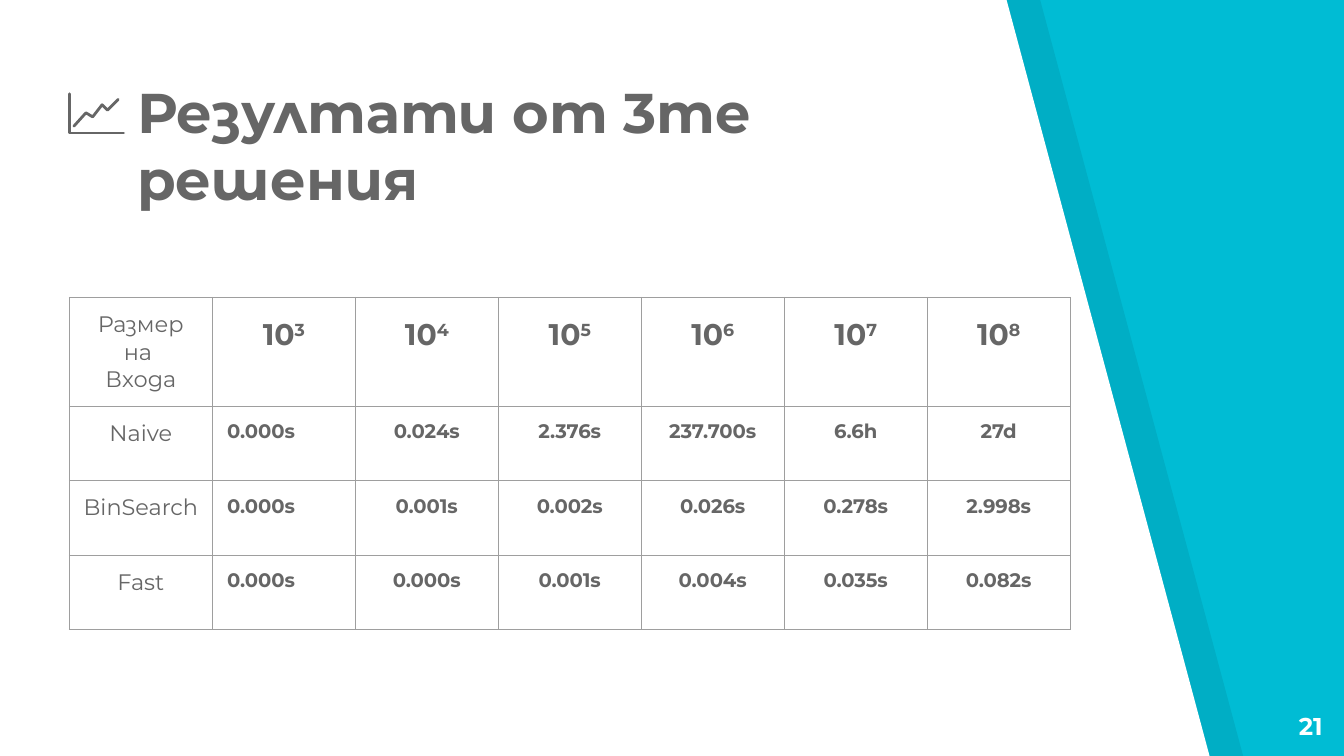
import dataclasses
import typing

import pptx
import pptx.dml.color
import pptx.enum.lang
import pptx.enum.text
import pptx.oxml
import pptx.oxml.ns
import pptx.util

COLORS = {"cyan": "00BCD4", "white": "FFFFFF", "shade": "000000",
          "text": "666666", "border": "9E9E9E"}
FONT = "Montserrat"
BULGARIAN = pptx.enum.lang.MSO_LANGUAGE_ID.BULGARIAN
ALIGN = pptx.enum.text.PP_ALIGN
ANCHOR = pptx.enum.text.MSO_ANCHOR
WIDTH = pptx.util.Inches(10)
HEIGHT = pptx.util.Emu(WIDTH * 9 // 16)
INSET = pptx.util.Inches(0.1)
MARGINS = {f"margin_{side}": INSET for side in ("left", "right", "top", "bottom")}
Point = tuple[float, float]


@dataclasses.dataclass(frozen=True)
class Outline:
    """Points in percent of the slide's width and height."""
    points: list[Point]
    fill: typing.Optional[str] = None
    alpha: int = 100
    line: typing.Optional[str] = None


@dataclasses.dataclass(frozen=True)
class Style:
    size: float
    bold: bool = True
    color: str = "text"


TITLE, NUMBER = Style(30), Style(13, color="white")
HEADER, LABEL, VALUE = Style(16), Style(12, bold=False), Style(10.5)


def panel(shift: float, fill: str, alpha: int = 100) -> Outline:
    corners = [(0, 0), (0, 100), (90, 100), (74.9, 0)]
    return Outline([(x + shift, y) for x, y in corners], fill, alpha)


PANELS = [panel(2.5, "shade", 7), panel(0, "white")]
CHART_ICON = [
    Outline([(5.2, 12.4), (5.2, 17.6), (9.2, 17.6)], line="text"),
    Outline([(5.5, 16.7), (6.4, 14.93), (6.9, 15.47), (7.6, 13.87),
             (8, 14.58), (8.8, 13.16)], line="text"),
]

EXPONENTS = "345678"
RESULTS = {
    "Naive": ["0.000s", "0.024s", "2.376s", "237.700s", "6.6h", "27d"],
    "BinSearch": ["0.000s", "0.001s", "0.002s", "0.026s", "0.278s", "2.998s"],
    "Fast": ["0.000s", "0.000s", "0.001s", "0.004s", "0.035s", "0.082s"],
}
COL_WIDTH, HEADER_HEIGHT, ROW_HEIGHT = 10.64, 14.42, 9.84


def across(share: float) -> int:
    return round(WIDTH * share / 100)


def down(share: float) -> int:
    return round(HEIGHT * share / 100)


def rgb(name: str) -> pptx.dml.color.RGBColor:
    return pptx.dml.color.RGBColor.from_string(COLORS[name])


def apply(obj: typing.Any, values: dict[str, typing.Any]) -> None:
    for name, value in values.items():
        setattr(obj, name, value)


def draw_outline(shapes: typing.Any, outline: Outline) -> None:
    start, *rest = [(across(x), down(y)) for x, y in outline.points]
    builder = shapes.build_freeform(*start)
    builder.add_line_segments(rest, close=outline.fill is not None)
    sp = builder.convert_to_shape()
    sp.shadow.inherit = False
    if outline.fill:
        sp.fill.solid()
        sp.fill.fore_color.rgb = rgb(outline.fill)
        if outline.alpha < 100:
            color = sp.fill._xPr.find(".//" + pptx.oxml.ns.qn("a:srgbClr"))
            color.append(pptx.oxml.parse_xml(
                f'<a:alpha {pptx.oxml.ns.nsdecls("a")} val="{outline.alpha * 1000}"/>'))
    else:
        sp.fill.background()
    if outline.line:
        sp.line.color.rgb = rgb(outline.line)
        sp.line.width = pptx.util.Pt(1.5)
        sp.line._get_or_add_ln().set("cap", "rnd")
    else:
        sp.line.fill.background()


def add_run(p: typing.Any, text: str, style: Style) -> typing.Any:
    r = p.add_run()
    r.text = text
    apply(r.font, {"name": FONT, "size": pptx.util.Pt(style.size),
                   "bold": style.bold, "language_id": BULGARIAN})
    r.font.color.rgb = rgb(style.color)
    return r


def format_frame(tf: typing.Any, anchor: typing.Any) -> None:
    apply(tf, MARGINS | {"word_wrap": True, "vertical_anchor": anchor,
                         "auto_size": pptx.enum.text.MSO_AUTO_SIZE.NONE})


def format_cell(cell: typing.Any) -> None:
    apply(cell, MARGINS | {"vertical_anchor": ANCHOR.TOP})
    cell.fill.background()
    tc_pr = cell._tc.get_or_add_tcPr()
    for i, side in enumerate("LRTB"):
        tc_pr.insert(i, pptx.oxml.parse_xml(
            f'<a:ln{side} {pptx.oxml.ns.nsdecls("a")} w="9525"><a:solidFill>'
            f'<a:srgbClr val="{COLORS["border"]}"/></a:solidFill></a:ln{side}>'))


def write_cell(cell: typing.Any, lines: list[str], style: Style,
               align: typing.Any = ALIGN.CENTER) -> typing.Any:
    tf = cell.text_frame
    for i, line in enumerate(lines):
        p = tf.add_paragraph() if i else tf.paragraphs[0]
        p.alignment = align
        add_run(p, line, style)
    return p


def draw_table(s: typing.Any) -> None:
    rows, cols = len(RESULTS) + 1, len(EXPONENTS) + 1
    heights = [HEADER_HEIGHT] + [ROW_HEIGHT] * len(RESULTS)
    table = s.shapes.add_table(rows, cols, across(5.16), down(39.35),
                               across(COL_WIDTH * cols), down(sum(heights))).table
    apply(table, {"first_row": False, "horz_banding": False})
    for col in table.columns:
        col.width = across(COL_WIDTH)
    for row, height in zip(table.rows, heights):
        row.height = down(height)
    for cell in table.iter_cells():
        format_cell(cell)

    # Header row: powers of ten
    write_cell(table.cell(0, 0), ["Размер на ", "Входа"], LABEL)
    for c, exponent in enumerate(EXPONENTS, 1):
        p = write_cell(table.cell(0, c), ["10"], HEADER)
        p.line_spacing = 1.15
        r = add_run(p, exponent, HEADER)
        r.font._element.set("baseline", "30000")

    # Running times, the first column of them set to the left
    for i, (name, times) in enumerate(RESULTS.items(), 1):
        write_cell(table.cell(i, 0), [name], LABEL)
        table.cell(i, 1).margin_left = pptx.util.Inches(0.11)
        for c, time in enumerate(times, 1):
            write_cell(table.cell(i, c), [time], VALUE,
                       ALIGN.LEFT if c == 1 else ALIGN.CENTER)


def main() -> None:
    prs = pptx.Presentation()
    apply(prs, {"slide_width": WIDTH, "slide_height": HEIGHT})
    s = prs.slides.add_slide(prs.slide_layouts[5])

    # Background and slanted panels
    s.background.fill.solid()
    s.background.fill.fore_color.rgb = rgb("cyan")
    for outline in PANELS:
        draw_outline(s.shapes, outline)

    # Title, in front of the panels
    title = s.shapes.title
    s.shapes._spTree.append(title._element)
    apply(title, {"left": across(9.2), "top": down(9.65),
                  "width": across(52.5), "height": down(20.1)})
    format_frame(title.text_frame, ANCHOR.BOTTOM)
    p = title.text_frame.paragraphs[0]
    apply(p, {"alignment": ALIGN.LEFT, "space_before": pptx.util.Pt(0)})
    add_run(p, "Резултати от 3те решения", TITLE)

    # Slide number
    box = s.shapes.add_textbox(across(93.4), down(92.35), across(6), down(7.65))
    format_frame(box.text_frame, ANCHOR.TOP)
    p = box.text_frame.paragraphs[0]
    p.alignment = ALIGN.RIGHT
    add_run(p, "21", NUMBER)

    # Results and line chart icon
    draw_table(s)
    icon = s.shapes.add_group_shape()
    for outline in CHART_ICON:
        draw_outline(icon.shapes, outline)
    prs.save("out.pptx")


if __name__ == "__main__":
    main()
